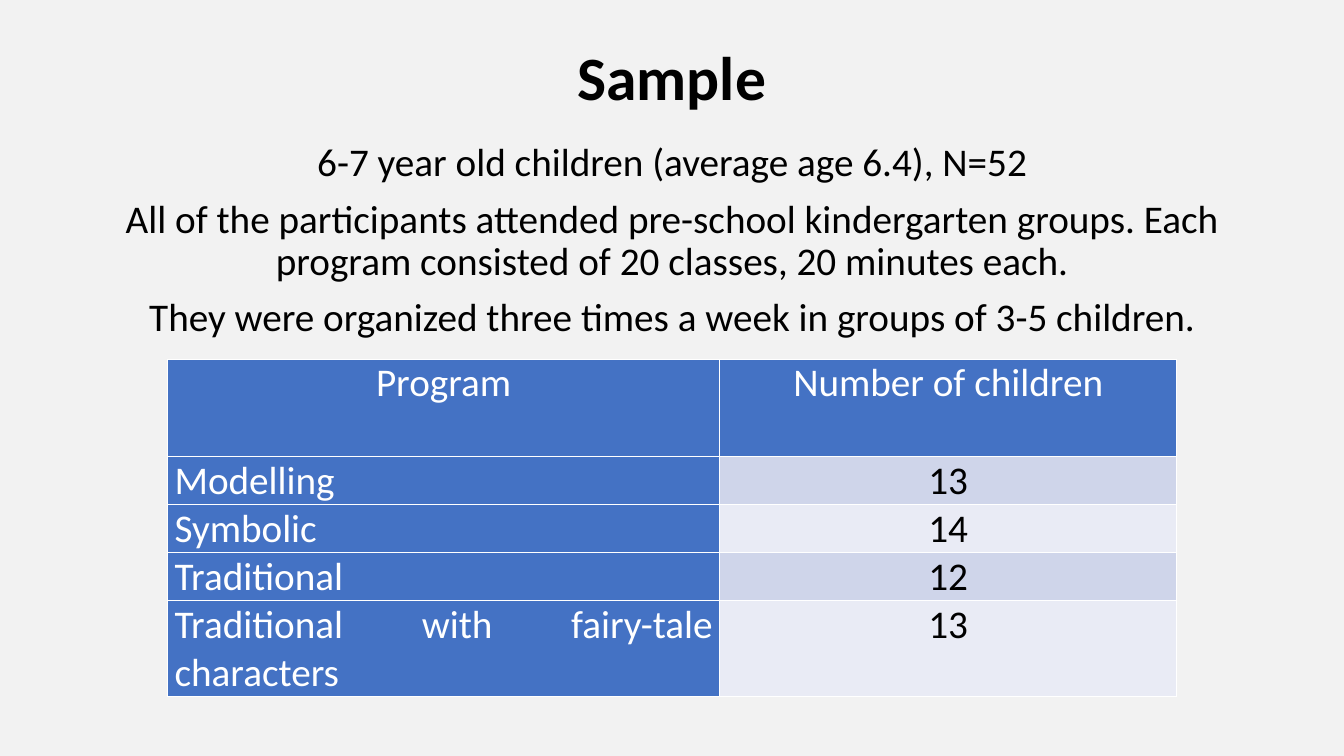
from dataclasses import dataclass

from lxml import etree
from pptx import Presentation
from pptx.dml.color import RGBColor
from pptx.enum.text import MSO_ANCHOR, PP_ALIGN
from pptx.oxml.ns import qn
from pptx.util import Cm, Pt

CENTER, JUSTIFY = PP_ALIGN.CENTER, PP_ALIGN.JUSTIFY
TOP, MIDDLE = MSO_ANCHOR.TOP, MSO_ANCHOR.MIDDLE


@dataclass(frozen=True)
class Theme:
    font: str = "Calibri"
    title: int = 44
    body: int = 28
    back: str = "F2F2F2"
    ink: str = "000000"
    white: str = "FFFFFF"
    blue: str = "4472C4"
    bands: tuple = ("CFD5EA", "E9EBF5")
    rule: int = 1


class Deck:
    def __init__(self, theme):
        self.theme = theme
        self.file = Presentation()
        self.file.slide_width, self.file.slide_height = Cm(33.87), Cm(19.05)
        self.slide = self.file.slides.add_slide(self.file.slide_layouts[6])
        self.paint(self.slide.background.fill, theme.back)

    def paint(self, fill, color):
        fill.solid()
        fill.fore_color.rgb = RGBColor.from_string(color)

    def style(self, para, size, color, align, bold=False):
        para.alignment = align
        font = para.font
        font.name, font.size, font.bold = self.theme.font, Pt(size), bold
        font.color.rgb = RGBColor.from_string(color)

    def text(self, box, lines, size, anchor=TOP, bold=False, space=0):
        frame = self.slide.shapes.add_textbox(*map(Cm, box)).text_frame
        frame.word_wrap, frame.vertical_anchor = True, anchor
        frame.text = "\n".join(lines)
        for para in frame.paragraphs:
            self.style(para, size, self.theme.ink, CENTER, bold)
            para.line_spacing, para.space_before = 0.9, Pt(space)

    def border(self, cell):
        props = cell._tc.get_or_add_tcPr()
        for side in ("lnL", "lnR", "lnT", "lnB"):
            line = etree.SubElement(props, qn(f"a:{side}"), w=str(Pt(self.theme.rule)))
            fill = etree.SubElement(line, qn("a:solidFill"))
            etree.SubElement(fill, qn("a:srgbClr"), val=self.theme.white)

    def cell(self, cell, text, fill, color, align):
        self.border(cell)
        self.paint(cell.fill, fill)
        cell.margin_left = cell.margin_right = Cm(0.18)
        cell.margin_top = cell.margin_bottom = 0
        cell.text = text
        self.style(cell.text_frame.paragraphs[0], self.theme.body, color, align)

    def table(self, left, top, widths, heights, rows):
        look = self.theme
        grid = self.slide.shapes.add_table(
            len(rows), len(widths), Cm(left), Cm(top),
            Cm(sum(widths)), Cm(sum(heights))).table
        grid.horz_banding = False
        for col, width in zip(grid.columns, widths):
            col.width = Cm(width)
        for r, (row, height) in enumerate(zip(rows, heights)):
            grid.rows[r].height = Cm(height)
            for c, text in enumerate(row):
                head = r == 0 or c == 0
                fill = look.blue if head else look.bands[(r - 1) % 2]
                color = look.white if head else look.ink
                align = JUSTIFY if r and c == 0 else CENTER
                self.cell(grid.cell(r, c), text, fill, color, align)


def main():
    look = Theme()
    deck = Deck(look)

    # Title
    deck.text((2.33, 1.02, 29.21, 2.03), ["Sample"], look.title, MIDDLE, bold=True)

    # Description of the sample
    deck.text((2.33, 3.48, 29.21, 7.11), [
        "6-7 year old children (average age 6.4), N=52",
        "All of the participants attended pre-school kindergarten groups. "
        "Each program consisted of 20 classes, 20 minutes each.",
        "They were organized three times a week in groups of 3-5 children.",
    ], look.body, space=10)

    # Children per program
    deck.table(4.22, 9.05, (13.92, 11.51), (2.46, 1.21, 1.21, 1.21, 2.42), [
        ("Program", "Number of children"),
        ("Modelling", "13"),
        ("Symbolic", "14"),
        ("Traditional", "12"),
        ("Traditional with fairy-tale characters", "13"),
    ])

    deck.file.save("out.pptx")


if __name__ == "__main__":
    main()
